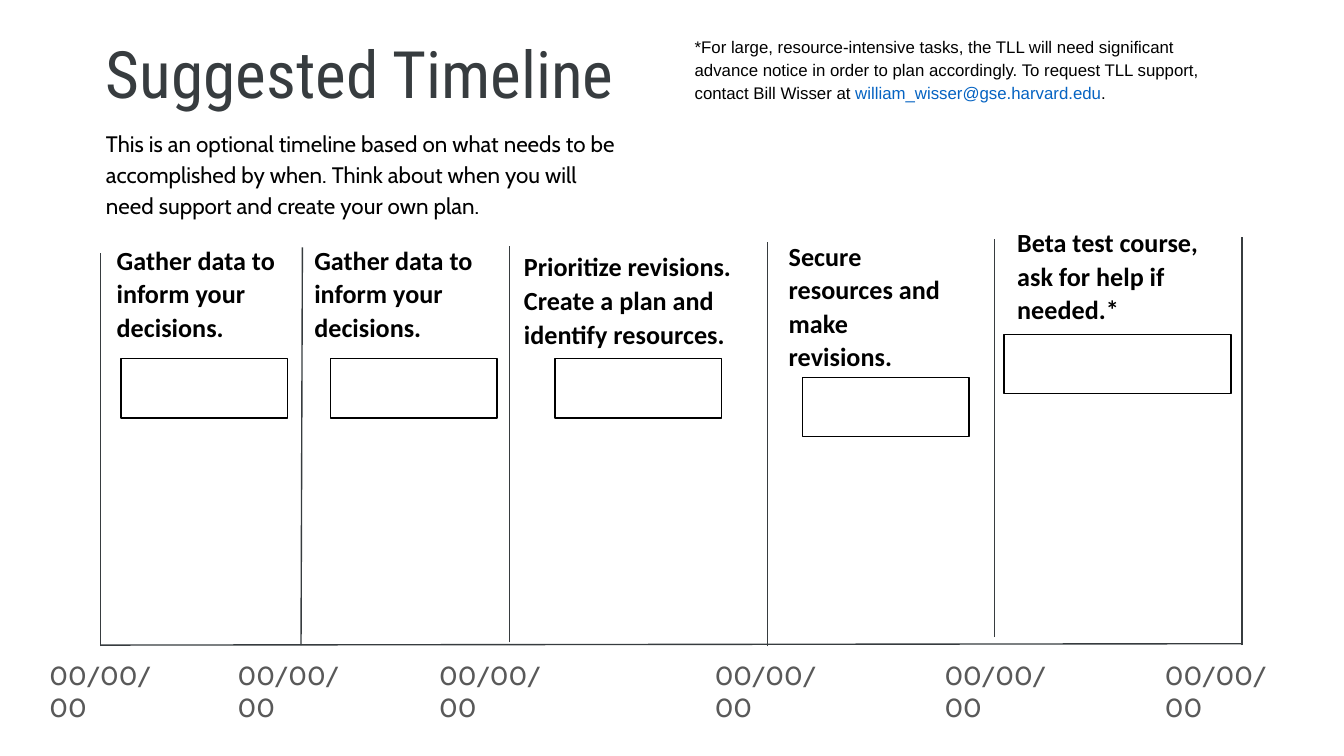
from lxml.etree import SubElement
from pptx import Presentation
from pptx.dml.color import RGBColor
from pptx.enum.shapes import MSO_CONNECTOR, MSO_SHAPE
from pptx.enum.text import MSO_AUTO_SIZE
from pptx.oxml.ns import qn
from pptx.util import Inches, Pt

INK = "373C3F"
BLACK = "000000"
LINK_BLUE = "0563C2"
DATE_GRAY = "595959"

# Column rules: start x, start y, end x, end y
COLUMN_RULES = [
    (0.75, 4.81, 0.75, 1.88),
    (2.24, 4.8, 2.25, 1.84),
    (3.79, 4.78, 3.79, 1.83),
    (5.71, 4.81, 5.71, 1.8),
    (7.4, 4.74, 7.4, 1.78),
    (9.24, 4.8, 9.24, 1.76),
]
BASELINE = (0.75, 4.8, 9.24, 4.79)

# Stages: text, its left, top, width, height and space after
STAGES = [
    ("Gather data to inform your decisions.", (0.77, 1.7, 1.45, 0.94), 8),
    ("Gather data to inform your decisions.", (2.24, 1.7, 1.45, 0.94), 8),
    ("Prioritize revisions. Create a plan and identify resources.",
     (3.8, 1.75, 2.02, 1.31), 0),
    ("Secure resources and make revisions.", (5.77, 1.67, 1.45, 0.94), 8),
    ("Beta test course, ask for help if needed.*", (7.47, 1.57, 1.59, 0.94), 8),
]

# Empty entry boxes: left, top, width
ENTRY_BOXES = [(0.9, 2.67, 1.24), (2.46, 2.67, 1.24), (4.13, 2.67, 1.24),
               (5.97, 2.81, 1.24), (7.47, 2.49, 1.69)]
DATE_LEFTS = [0.27, 1.67, 3.17, 5.22, 6.93, 8.57]


def color(hex_value):
    return RGBColor.from_string(hex_value)


def add_text(slide, text, place, *, font, size, ink=BLACK, bold=False,
             line_spacing=1.0, space_after=0):
    """Add a text box; text is a string or a list of (string, colour) runs."""
    box = slide.shapes.add_textbox(*map(Inches, place))
    frame = box.text_frame
    frame.word_wrap = True
    frame.auto_size = MSO_AUTO_SIZE.SHAPE_TO_FIT_TEXT
    frame.margin_left = frame.margin_right = Inches(0.1)
    frame.margin_top = frame.margin_bottom = Inches(0.1)
    paragraph = frame.paragraphs[0]
    paragraph.line_spacing = line_spacing
    paragraph.space_after = Pt(space_after)
    for words, run_ink in [(text, ink)] if isinstance(text, str) else text:
        run = paragraph.add_run()
        run.text = words
        run.font.name = font
        run.font.size = Pt(size)
        run.font.bold = bold
        run.font.color.rgb = color(run_ink)


def add_rule(slide, ends):
    rule = slide.shapes.add_connector(MSO_CONNECTOR.STRAIGHT, *map(Inches, ends))
    rule.line.color.rgb = color(INK)
    rule.line.width = Pt(0.75)
    SubElement(rule._element.spPr, qn("a:effectLst"))


def add_entry_box(slide, left, top, width):
    entry = slide.shapes.add_shape(MSO_SHAPE.RECTANGLE, Inches(left), Inches(top),
                                   Inches(width), Inches(0.44))
    entry.shadow.inherit = False
    entry.fill.background()
    entry.line.color.rgb = color(BLACK)
    entry.line.width = Pt(0.75)


def main():
    deck = Presentation()
    deck.slide_width = Inches(10)
    deck.slide_height = Inches(10 * 9 / 16)  # widescreen
    slide = deck.slides.add_slide(deck.slide_layouts[6])

    # Timeline frame
    for ends in COLUMN_RULES + [BASELINE]:
        add_rule(slide, ends)

    # Heading, introduction and support note
    add_text(slide, "This is an optional timeline based on what needs to be "
             "accomplished by when. Think about when you will need support and "
             "create your own plan.", (0.69, 0.84, 4.09, 0.87),
             font="Cabin", size=12, line_spacing=1.15)
    add_text(slide, "Suggested Timeline", (0.69, 0.15, 4.09, 0.79),
             font="Roboto Condensed", size=35, ink=INK)
    support_note = [
        ("*For large, resource-intensive tasks, the TLL will need significant "
         "advance notice in order to plan accordingly. To request TLL support, "
         "contact Bill Wisser at ", BLACK),
        ("william_wisser@gse.harvard.edu", LINK_BLUE),
        (".", BLACK),
    ]
    add_text(slide, support_note, (5.07, 0.15, 4.25, 0.7),
             font="Arial", size=9, line_spacing=1.15)

    # Stages with their entry boxes
    for task, place, space_after in STAGES:
        add_text(slide, task, place, font="Calibri", size=14, bold=True,
                 line_spacing=1.07, space_after=space_after)
    for left, top, width in ENTRY_BOXES:
        add_entry_box(slide, left, top, width)

    # Dates below the column rules
    for left in DATE_LEFTS:
        add_text(slide, "00/00/00", (left, 4.81, 1.04, 0.44),
                 font="Cabin", size=14, ink=DATE_GRAY)

    deck.save("out.pptx")


if __name__ == "__main__":
    main()
